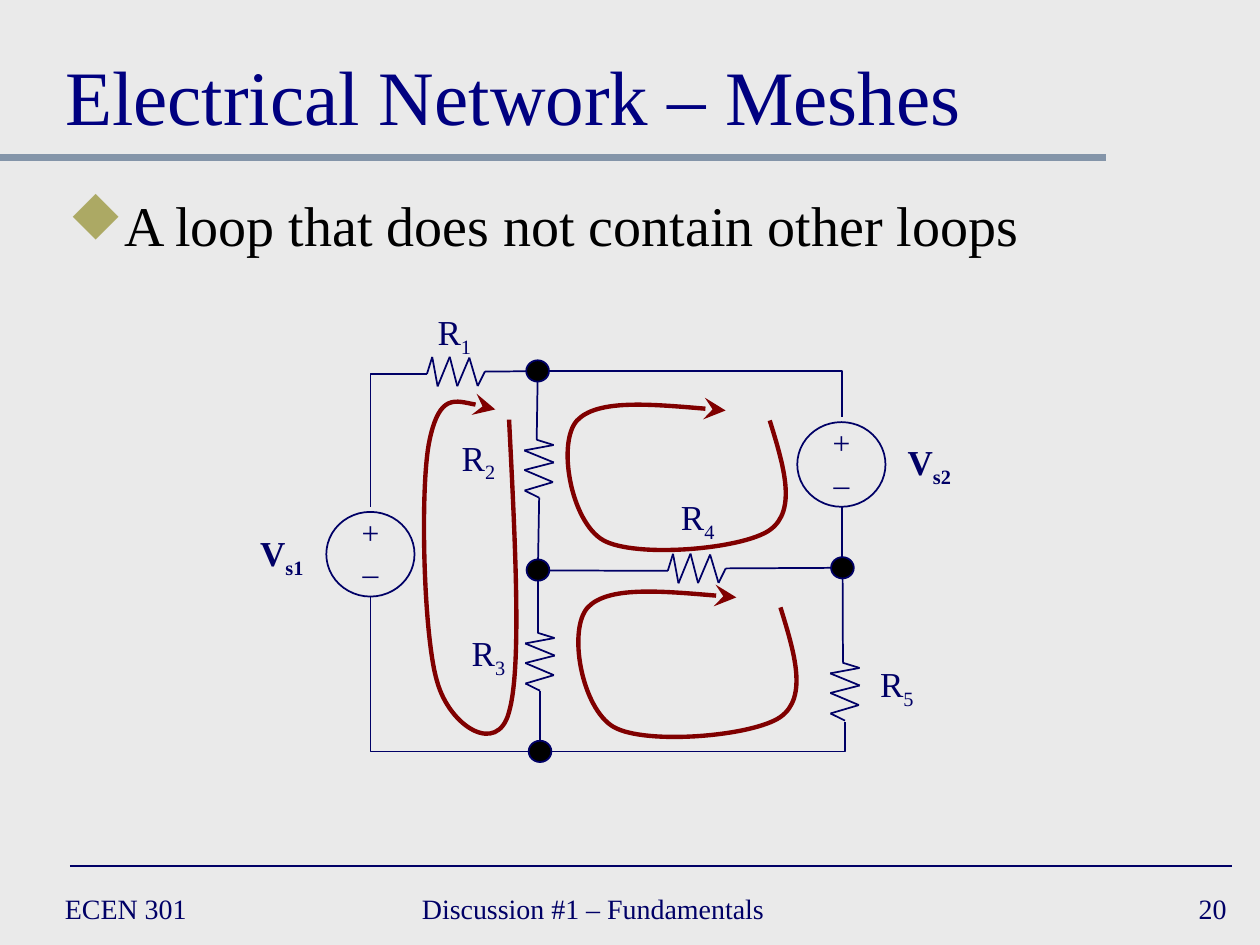
from itertools import pairwise
from pptx import Presentation
from pptx.dml.color import RGBColor
from pptx.enum.shapes import MSO_CONNECTOR as Link, MSO_SHAPE as Shape
from pptx.enum.text import MSO_ANCHOR as Anchor, MSO_AUTO_SIZE as Fit, PP_ALIGN as Align
from pptx.oxml.ns import qn
from pptx.util import Pt
from lxml.etree import SubElement

COLORS = {
    "background": "EAEAEA", "title": "000080", "body": "000000",
    "circuit": "000066", "mesh": "800000", "rule": "8495A9",
    "bullet": "ACA964", "node": "000000",
}
FONT = "Times New Roman"
ZIGZAG = [(0, 0), (3, -9.7), (6.1, 7.1), (13, -9.8), (17.3, 7), (24.2, -9.3),
          (29, 6.9), (33.1, -1.4)]


def color(key):
    return RGBColor.from_string(COLORS[key])


class CircuitSlide:
    def __init__(self, slide):
        self.slide = slide
        self.shapes = slide.shapes
        slide.background.fill.solid()
        slide.background.fill.fore_color.rgb = color("background")

    def text(self, left, top, width, height, runs, size, ink="circuit", bold=False,
             align=Align.LEFT, anchor=Anchor.TOP, fitted=False, bullet=None):
        box = self.shapes.add_textbox(Pt(left), Pt(top), Pt(width), Pt(height))
        frame = box.text_frame
        frame.word_wrap = not fitted
        frame.auto_size = Fit.SHAPE_TO_FIT_TEXT if fitted else Fit.NONE
        frame.vertical_anchor = anchor
        paragraph = frame.paragraphs[0]
        paragraph.alignment = align
        if bullet:
            properties = paragraph._p.get_or_add_pPr()
            properties.set("marL", str(Pt(27)))
            properties.set("indent", str(-Pt(27)))
            bullet_color = SubElement(properties, qn("a:buClr"))
            SubElement(bullet_color, qn("a:srgbClr"), val=COLORS["bullet"])
            SubElement(properties, qn("a:buFont"), typeface="Wingdings", charset="2")
            SubElement(properties, qn("a:buChar"), char=bullet)
        for words, baseline in runs:
            run = paragraph.add_run()
            run.text = words
            run.font.name = FONT
            run.font.size = Pt(size)
            run.font.bold = bold
            run.font.color.rgb = color(ink)
            if baseline:
                run._r.get_or_add_rPr().set("baseline", str(baseline))

    def label(self, left, top, width, letter, subscript, bold=False):
        self.text(left, top, width, 31, [(letter, 0), (subscript, -25000)], 20,
                  bold=bold, align=Align.CENTER, fitted=True)

    def outline(self, shape, ink="circuit", weight=1):
        shape.line.color.rgb = color(ink)
        shape.line.width = Pt(weight)

    def wire(self, begin, end, ink="circuit", weight=1, bent=False):
        kind = Link.ELBOW if bent else Link.STRAIGHT
        link = self.shapes.add_connector(kind, *map(Pt, begin + end))
        self.outline(link, ink, weight)
        properties = link._element.spPr
        if bent:
            properties.find(qn("a:prstGeom")).set("prst", "bentConnector2")
        SubElement(properties, qn("a:effectLst"))

    def ellipse(self, left, top, width, height, fill=None):
        oval = self.shapes.add_shape(Shape.OVAL, Pt(left), Pt(top), Pt(width), Pt(height))
        oval.shadow.inherit = False
        if fill:
            oval.fill.solid()
            oval.fill.fore_color.rgb = color(fill)
        else:
            oval.fill.background()
        self.outline(oval)

    def node(self, x, y):
        self.ellipse(x - 6.5, y - 6.1, 13, 12.2, "node")

    def source(self, left, top):
        self.ellipse(left, top, 50.4, 48.4)
        for sign, drop in (("+", -2.9), ("_", 14.5)):
            self.text(left + 13, top + drop, 24.5, 29, [(sign, 0)], 18,
                      align=Align.CENTER, fitted=True)

    def resistor(self, x, y, vertical=False):
        corners = [(x - across, y + along) if vertical else (x + along, y + across)
                   for along, across in ZIGZAG]
        for begin, end in pairwise(corners):
            self.wire(begin, end)

    def mesh(self, points, shift=(0, 0)):
        start, *rest = [(Pt(x + shift[0]), Pt(y + shift[1])) for x, y in points]
        builder = self.shapes.build_freeform(*start)
        builder.add_line_segments(rest, close=False)
        arrow = builder.convert_to_shape()
        arrow.shadow.inherit = False
        arrow.fill.background()
        self.outline(arrow, "mesh", 2.5)
        segments = list(arrow._element.iter(qn("a:lnTo")))
        for first in range(0, len(segments), 3):
            outline = segments[first].getparent()
            curve = SubElement(outline, qn("a:cubicBezTo"))
            for segment in segments[first:first + 3]:
                curve.append(segment[0])
                outline.remove(segment)
        SubElement(arrow.line._get_or_add_ln(), qn("a:tailEnd"),
                   type="stealth", w="lg", len="lg")


def main():
    deck = Presentation()
    deck.slide_width, deck.slide_height = Pt(720), Pt(540)
    page = CircuitSlide(deck.slides.add_slide(deck.slide_layouts[6]))

    page.wire((0, 90), (632, 90), "rule", 4)
    page.wire((40, 495), (704, 495))
    page.text(30.2, 12, 660, 72, [("Electrical Network – Meshes", 0)], 44, "title",
              anchor=Anchor.BOTTOM)
    page.text(31.8, 105.2, 658, 111, [("A loop that does not contain other loops", 0)], 32,
              "body", bullet="u")
    for left, width, words, align in (
            (30, 156, "ECEN 301", Align.LEFT),
            (234, 276, "Discussion #1 – Fundamentals", Align.LEFT),
            (558, 150, "20", Align.RIGHT)):
        page.text(left, 504, width, 30, [(words, 0)], 16, align=align, anchor=Anchor.MIDDLE)

    for begin, end in (
            ((244, 213.7), (211.8, 289.6)),
            ((302.2, 429.4), (211.8, 341)),
            ((313.4, 212), (481.3, 238.3)),
            ((314.8, 429.5), (482.9, 412.4))):
        page.wire(begin, end, bent=True)
    for begin, end in (
            ((277.1, 212.3), (301, 212.2)),
            ((307.2, 218.1), (306.7, 251.3)),
            ((308.1, 284.4), (307.5, 319.7)),
            ((307.5, 331.9), (307.4, 361.6)),
            ((308.6, 394.8), (308.6, 423.4)),
            ((314, 326), (381.6, 326.2)),
            ((414.7, 324.8), (475.2, 324.5)),
            ((481, 289.5), (481, 318.2)),
            ((481.5, 330.5), (481.7, 378.7))):
        page.wire(begin, end)

    page.resistor(244, 213.7)
    page.resistor(381.6, 326.2)
    for x, y in ((306.7, 251.3), (307.2, 361.6), (481.5, 378.7)):
        page.resistor(x, y, vertical=True)
    for x, y in ((307.2, 212), (307.4, 325.8), (481.4, 324.5), (308.6, 429.4)):
        page.node(x, y)
    page.source(186.5, 292.5)
    page.source(455.6, 241.2)

    page.mesh([
        (290.9, 239.8), (294.5, 311), (298.1, 381.6), (290.9, 406.8),
        (284.4, 432), (257, 415.4), (249.8, 389.5),
        (241.9, 363.6), (239.8, 277.2), (245.5, 251.3),
        (251.3, 224.6), (267.1, 229.7), (283, 234)])
    for shift in ((0, 0), (6.1, 106.8)):
        page.mesh([
            (439.9, 240.3), (447.8, 265.9), (455.8, 291.6), (439.9, 302.9),
            (424.1, 314), (362.9, 319), (344.7, 308.7),
            (326.2, 298.1), (318.2, 252.9), (329.8, 240.3),
            (341.3, 228.2), (378, 231.3), (414.7, 234.6)], shift)

    for left, top, number in (
            (242.4, 173.8, "1"), (256.2, 245.7, "2"), (261.9, 357.2, "3"),
            (381.4, 279.5, "4"), (495.2, 375.1, "5")):
        page.label(left, top, 34.5, "R", number)
    for left, top, name in ((140.9, 300.2, "s1"), (510.9, 248.4, "s2")):
        page.label(left, top, 40.3, "V", name, bold=True)

    deck.save("out.pptx")


if __name__ == "__main__":
    main()
